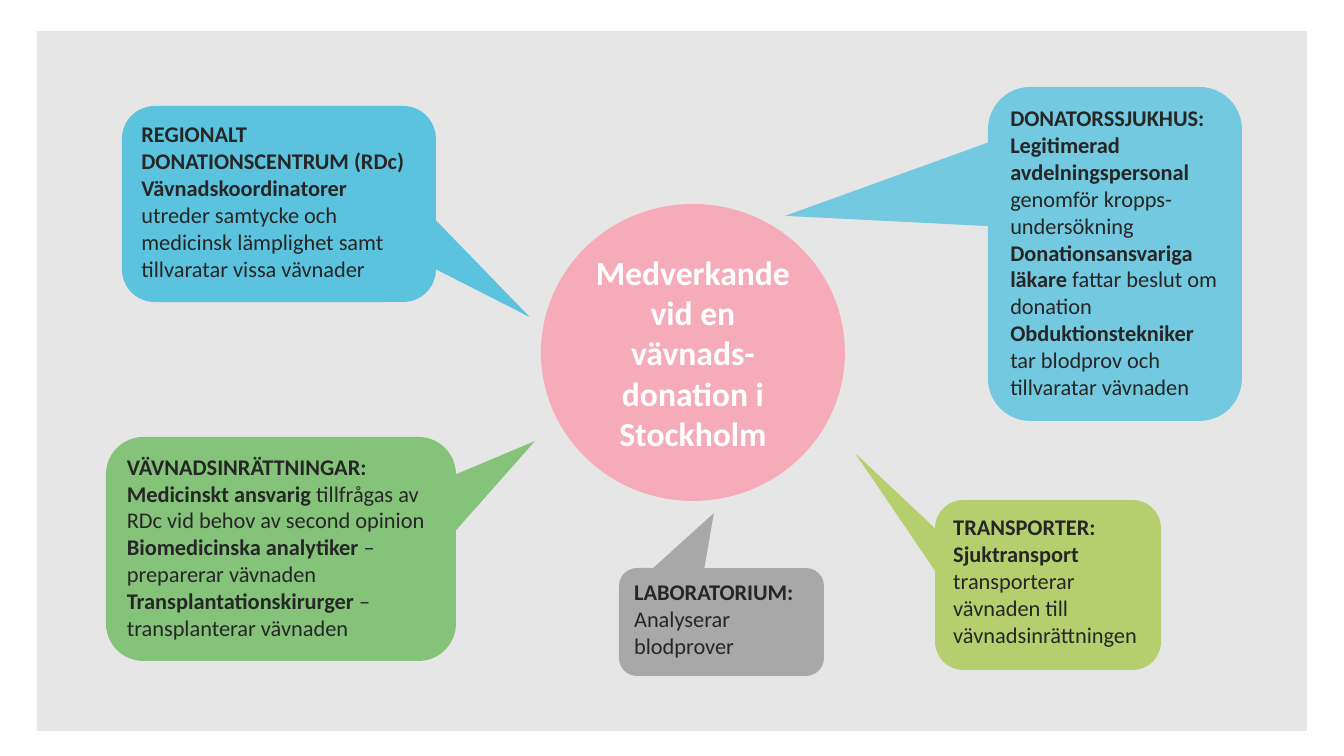
"""Build the slide on who takes part in a tissue donation in Stockholm."""
import pptx
import pptx.util
import pptx.dml.color
import pptx.enum.shapes
import pptx.enum.text
import pptx.oxml.ns
import lxml.etree

SCALE = 914400 / 100.8
KIND = pptx.enum.shapes.MSO_SHAPE
ALIGN = pptx.enum.text.PP_ALIGN
ANCHOR = pptx.enum.text.MSO_ANCHOR
SIZE = (1344, 756)
PANEL = (37, 31, 1270, 700)
HUB = (541, 204, 304, 297)
TITLE = [[("Medverkande vid en vävnads-donation i Stockholm", True)]]

CALLS = [
    {"box": (122, 106, 314, 196), "tip": (530, 317), "fill": ("00ADD9", 60),
     "text": [[("REGIONALT DONATIONSCENTRUM (RDc) Vävnadskoordinatorer", True),
               (" utreder samtycke och medicinsk lämplighet samt tillvaratar vissa vävnader", False)]]},
    {"box": (106, 437, 350, 224), "tip": (535, 441), "fill": ("45AC34", 60),
     "text": [[("VÄVNADSINRÄTTNINGAR:", True)],
              [("Medicinskt ansvarig ", True),
               ("tillfrågas av RDc vid behov av second opinion", False)],
              [("Biomedicinska analytiker ", True), ("– preparerar vävnaden", False)],
              [("Transplantationskirurger", True), (" – transplanterar vävnaden", False)]]},
    {"box": (619, 568, 205, 108), "tip": (714, 513), "fill": ("808080", 60),
     "text": [[("LABORATORIUM:", True)], [("Analyserar blodprover", False)]]},
    {"box": (988, 87, 254, 334), "tip": (785, 216), "fill": ("00ADD9", 50),
     "text": [[("DONATORSSJUKHUS:", True)],
              [("Legitimerad avdelningspersonal ", True),
               ("genomför kropps-undersökning", False)],
              [("Donationsansvariga läkare", True), (" fattar beslut om donation", False)],
              [("Obduktionstekniker", True), (" tar blodprov och tillvaratar vävnaden", False)]]},
    {"box": (935, 500, 226, 170), "tip": (855, 453), "fill": ("95C11F", 60),
     "text": [[("TRANSPORTER:", True)],
              [("Sjuktransport", True),
               (" transporterar vävnaden till vävnadsinrättningen", False)]]},
]
HEAD = {"size": pptx.util.Pt(24), "name": "Calibri"}
BODY = {"size": pptx.util.Pt(16), "name": "Calibri"}


def px(num):
    """Turn pixels into EMU."""
    return round(num * SCALE)


def color(code):
    """Turn a hex string into a colour."""
    return pptx.dml.color.RGBColor.from_string(code)


def shape(slide, kind, box, code, alpha=100):
    """Add a flat shape without outline or shadow."""
    item = slide.shapes.add_shape(kind, *map(px, box))
    item.shadow.inherit = False
    item.line.fill.background()
    item.fill.solid()
    item.fill.fore_color.rgb = color(code)
    if alpha < 100:
        tone = item.fill._xPr.find(".//" + pptx.oxml.ns.qn("a:srgbClr"))
        lxml.etree.SubElement(tone, pptx.oxml.ns.qn("a:alpha"), val=str(alpha * 1000))
    return item


def write(item, paras, form, ink, align, anchor):
    """Fill a shape with paragraphs of plain and bold runs."""
    frame = item.text_frame
    frame.word_wrap = True
    frame.vertical_anchor = anchor
    for num, parts in enumerate(paras):
        para = frame.add_paragraph() if num else frame.paragraphs[0]
        para.alignment = align
        for text, bold in parts:
            run = para.add_run()
            run.text = text
            for key, val in {**form, "bold": bold}.items():
                setattr(run.font, key, val)
            run.font.color.rgb = color(ink)


def aim(item, box, tip):
    """Point the callout at a spot on the slide."""
    left, top, wide, high = box
    item.adjustments[0] = round((tip[0] - left) / wide - 0.5, 3)
    item.adjustments[1] = round((tip[1] - top) / high - 0.5, 3)


def main():
    """Draw the panel, the hub and its callouts."""
    deck = pptx.Presentation()
    deck.slide_width, deck.slide_height = map(px, SIZE)
    slide = deck.slides.add_slide(deck.slide_layouts[6])
    shape(slide, KIND.RECTANGLE, PANEL, "E7E6E6")
    hub = shape(slide, KIND.FLOWCHART_CONNECTOR, HUB, "F5ACB8")
    write(hub, TITLE, HEAD, "FFFFFF", ALIGN.CENTER, ANCHOR.MIDDLE)
    for call in CALLS:
        item = shape(slide, KIND.ROUNDED_RECTANGULAR_CALLOUT, call["box"], *call["fill"])
        aim(item, call["box"], call["tip"])
        write(item, call["text"], BODY, "262626", ALIGN.LEFT, ANCHOR.TOP)
    deck.save("out.pptx")


if __name__ == "__main__":
    main()
